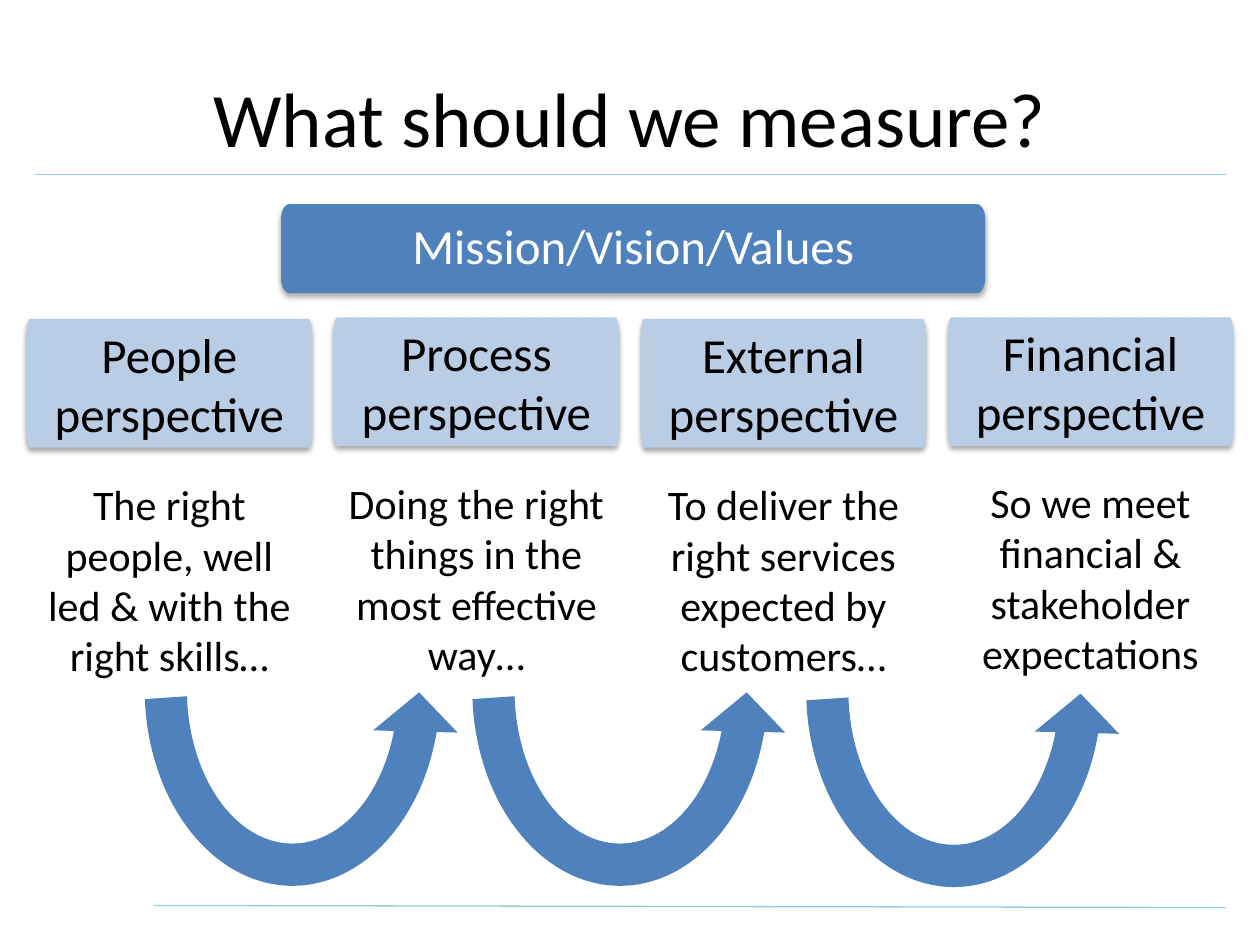
from dataclasses import dataclass
from math import cos, pi, sin

from lxml.etree import SubElement
from pptx import Presentation
from pptx.dml.color import RGBColor
from pptx.enum.shapes import MSO_CONNECTOR, MSO_SHAPE
from pptx.enum.text import MSO_ANCHOR, PP_ALIGN
from pptx.oxml.ns import qn
from pptx.util import Pt

FONT = "Calibri"
BLACK, WHITE = "000000", "FFFFFF"
BLUE, PALE_BLUE, RULE_BLUE = "4F81BD", "B9CDE5", "93CDDD"
COLUMN_LEFT, COLUMN_STEP, COLUMN_WIDTH = 15.1, 175.45, 163.4
CORNER_STEPS = 6


@dataclass
class Box:
    left: float
    top: float
    width: float
    height: float


@dataclass
class Perspective:
    heading: str
    heading_top: float
    description: str
    description_top: float


PERSPECTIVES = [
    Perspective("People perspective", 182.2,
                "The right people, well led & with the right skills…", 270),
    Perspective("Process perspective", 181.4,
                "Doing the right things in the most effective way…", 269.3),
    Perspective("External perspective", 182.2,
                "To deliver the right services expected by customers…", 270),
    Perspective("Financial perspective", 181.4,
                "So we meet financial & stakeholder expectations", 268.6),
]
ARROWS = [Box(70.6, 269.3, 193, 249), Box(257.8, 269.3, 193, 249),
          Box(448.6, 270, 193, 249)]
ARROW_ADJUSTMENTS = (0.125, 10.528, 204.577, 110.336, 0.125)


def color(value: str) -> RGBColor:
    return RGBColor.from_string(value)


def paint(shape, fill: str) -> None:
    shape.shadow.inherit = False
    shape.fill.solid()
    shape.fill.fore_color.rgb = color(fill)
    shape.line.fill.background()


def write(shape, text: str, size: float, text_color: str):
    frame = shape.text_frame
    frame.word_wrap = True
    para = frame.paragraphs[0]
    para.text = text
    para.alignment = PP_ALIGN.CENTER
    para.font.name = FONT
    para.font.size = Pt(size)
    para.font.color.rgb = color(text_color)
    return frame


def add_text(page, box: Box, text: str, size: float):
    shape = page.shapes.add_textbox(
        Pt(box.left), Pt(box.top), Pt(box.width), Pt(box.height))
    return write(shape, text, size, BLACK)


def add_soft_shadow(shape) -> None:
    effects = shape._element.spPr.find(qn("a:effectLst"))
    shadow = SubElement(effects, qn("a:outerShdw"), blurRad=str(Pt(3.1)),
                        dist=str(Pt(1.8)), dir="5400000", rotWithShape="0")
    tint = SubElement(shadow, qn("a:srgbClr"), val=BLACK)
    SubElement(tint, qn("a:alpha"), val="35000")


def add_panel(page, box: Box, radius_x: float, radius_y: float,
              fill: str, text: str, text_color: str):
    """Draw a shadowed panel with elliptical corners."""
    right, bottom = box.left + box.width, box.top + box.height
    centers = [
        (right - radius_x, bottom - radius_y),
        (box.left + radius_x, bottom - radius_y),
        (box.left + radius_x, box.top + radius_y),
        (right - radius_x, box.top + radius_y),
    ]
    points = []
    for corner, (x, y) in enumerate(centers):
        for step in range(CORNER_STEPS + 1):
            angle = (corner + step / CORNER_STEPS) * pi / 2
            points.append((Pt(x + radius_x * cos(angle)),
                           Pt(y + radius_y * sin(angle))))
    builder = page.shapes.build_freeform(*points[0])
    builder.add_line_segments(points[1:], close=True)
    panel = builder.convert_to_shape()
    paint(panel, fill)
    add_soft_shadow(panel)
    frame = write(panel, text, 28, text_color)
    frame.vertical_anchor = MSO_ANCHOR.MIDDLE
    frame.margin_left = frame.margin_right = Pt(9.4)
    frame.margin_top = frame.margin_bottom = Pt(9.4)
    return frame


def add_rule(page, x1: float, y1: float, x2: float, y2: float) -> None:
    rule = page.shapes.add_connector(
        MSO_CONNECTOR.STRAIGHT, Pt(x1), Pt(y1), Pt(x2), Pt(y2))
    rule.line.color.rgb = color(RULE_BLUE)
    rule.line.width = Pt(0.75)
    SubElement(rule._element.spPr, qn("a:effectLst"))


def add_curved_arrow(page, box: Box) -> None:
    arrow = page.shapes.add_shape(
        MSO_SHAPE.CIRCULAR_ARROW,
        Pt(box.left), Pt(box.top), Pt(box.width), Pt(box.height))
    for index, value in enumerate(ARROW_ADJUSTMENTS):
        arrow.adjustments[index] = value
    arrow._element.spPr.xfrm.set("flipV", "1")
    paint(arrow, BLUE)


def main() -> None:
    deck = Presentation()
    deck.slide_width, deck.slide_height = Pt(720), Pt(540)
    page = deck.slides.add_slide(deck.slide_layouts[6])

    # Rules and title
    add_rule(page, 87.8, 517.4, 700.4, 518.6)
    add_rule(page, 19.8, 99.8, 700.8, 99.8)
    title = add_text(page, Box(36, 21.6, 648, 90), "What should we measure?", 44)
    title.vertical_anchor = MSO_ANCHOR.MIDDLE

    # Mission banner
    banner = add_panel(page, Box(160.6, 116.6, 402.4, 51), 5, 8.5,
                       BLUE, "Mission/Vision/Values", WHITE)
    banner.paragraphs[0].line_spacing = 0.9

    # Perspective columns
    for index, item in enumerate(PERSPECTIVES):
        left = COLUMN_LEFT + index * COLUMN_STEP
        add_panel(page, Box(left, item.heading_top, COLUMN_WIDTH, 73.6), 2.2, 12.2,
                  PALE_BLUE, item.heading, BLACK)
        add_text(page, Box(left, item.description_top, COLUMN_WIDTH, 123.8),
                 item.description, 24)

    # Arrows from each perspective to the next
    for box in ARROWS:
        add_curved_arrow(page, box)

    deck.save("out.pptx")


if __name__ == "__main__":
    main()
